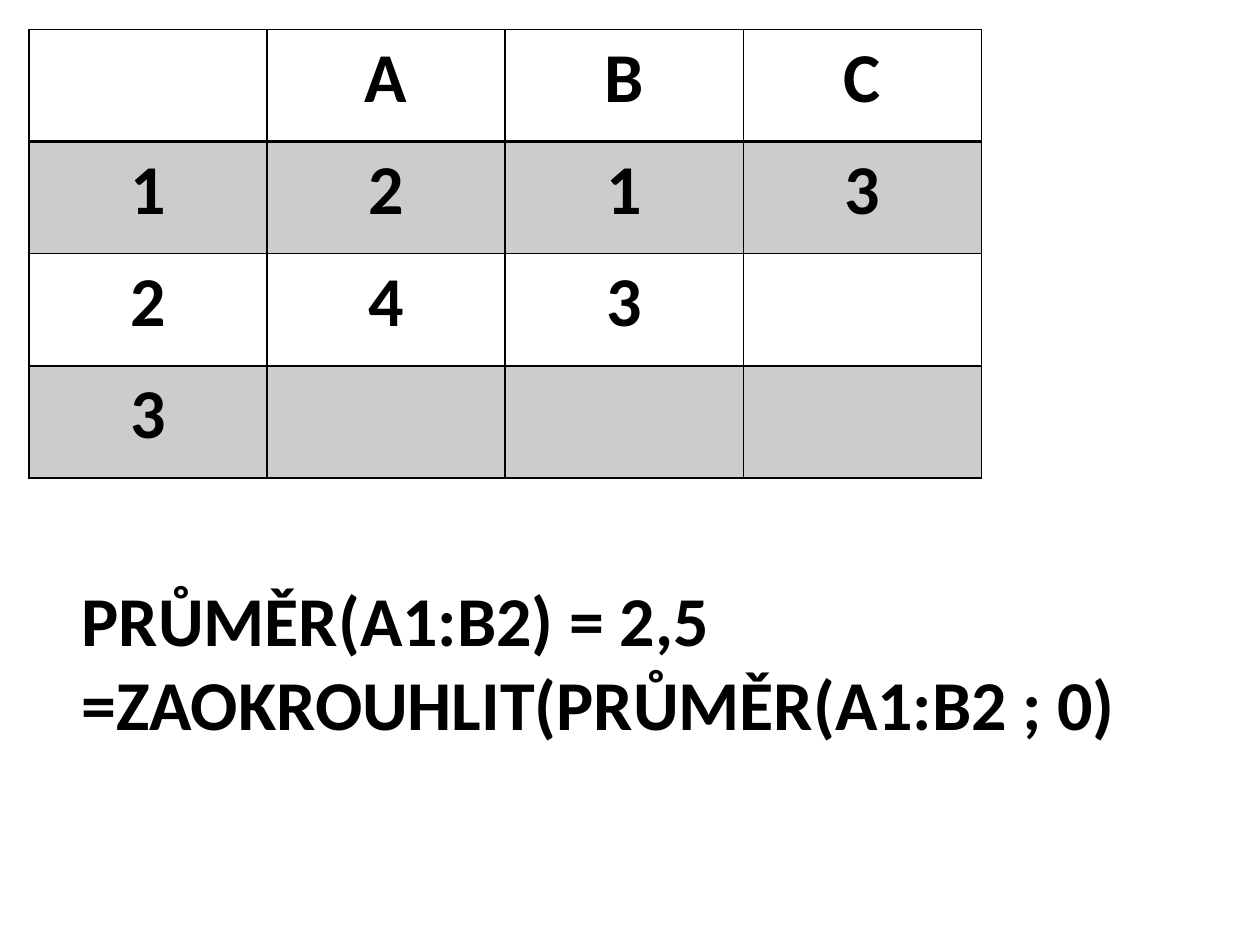
"""Build a slide showing a small spreadsheet and the rounding of its average."""
from dataclasses import dataclass

import lxml.etree
import pptx
import pptx.dml.color
import pptx.enum.text
import pptx.oxml.ns
import pptx.util


@dataclass(frozen=True)
class Theme:
    font: str = "Calibri"
    size: int = 40
    ink: str = "000000"
    band_opacity: int = 20
    thin: int = 1
    thick: int = 2


@dataclass(frozen=True)
class Area:
    left: float
    top: float
    width: float
    height: float

    def on(self, deck) -> tuple[int, int, int, int]:
        """Turn shares of the slide into lengths."""
        return (int(self.left * deck.slide_width), int(self.top * deck.slide_height),
                int(self.width * deck.slide_width), int(self.height * deck.slide_height))


THEME = Theme()
SHEET_AREA = Area(0.023, 0.031, 0.756, 0.475)
FORMULA_AREA = Area(0.055, 0.604, 0.867, 0.193)
SHEET = (
    ("", "A", "B", "C"),
    ("1", "2", "1", "3"),
    ("2", "4", "3", ""),
    ("3", "", "", ""),
)
FORMULAS = ("PRŮMĚR(A1:B2) = 2,5", "=ZAOKROUHLIT(PRŮMĚR(A1:B2 ; 0)")


def add_child(parent, tag: str, **attributes: str):
    """Append a DrawingML element to its parent."""
    return lxml.etree.SubElement(parent, pptx.oxml.ns.qn(tag), attributes)


def write(paragraph, words: str) -> None:
    """Add one run in the slide's type."""
    run = paragraph.add_run()
    run.text = words
    run.font.name = THEME.font
    run.font.size = pptx.util.Pt(THEME.size)
    run.font.bold = True
    run.font.color.rgb = pptx.dml.color.RGBColor.from_string(THEME.ink)


def draw_borders(cell, row: int) -> None:
    """Rule all four sides, with a thicker line under the header."""
    top = THEME.thick if row == 1 else THEME.thin
    bottom = THEME.thick if row == 0 else THEME.thin
    sides = {"a:lnL": THEME.thin, "a:lnR": THEME.thin, "a:lnT": top, "a:lnB": bottom}
    properties = cell._tc.get_or_add_tcPr()
    for tag, points in sides.items():
        line = add_child(properties, tag, w=str(pptx.util.Pt(points)))
        add_child(add_child(line, "a:solidFill"), "a:srgbClr", val=THEME.ink)


def fill_cell(cell, banded: bool) -> None:
    """Give a banded cell a translucent fill and leave the others clear."""
    if not banded:
        cell.fill.background()
        return
    cell.fill.solid()
    cell.fill.fore_color.rgb = pptx.dml.color.RGBColor.from_string(THEME.ink)
    color = cell._tc.tcPr.find(".//" + pptx.oxml.ns.qn("a:solidFill") + "[last()]/..")
    tint = cell._tc.tcPr.findall(pptx.oxml.ns.qn("a:solidFill"))[0][0]
    add_child(tint, "a:alpha", val=str(THEME.band_opacity * 1000))


def draw_sheet(deck, slide) -> None:
    """Draw the spreadsheet on an even grid."""
    grid = slide.shapes.add_table(len(SHEET), len(SHEET[0]), *SHEET_AREA.on(deck)).table
    grid.first_row = False
    grid.horz_banding = False
    for row, values in enumerate(SHEET):
        for column, value in enumerate(values):
            cell = grid.cell(row, column)
            draw_borders(cell, row)
            fill_cell(cell, banded=row % 2 == 1)
            if value:
                entry = cell.text_frame.paragraphs[0]
                entry.alignment = pptx.enum.text.PP_ALIGN.CENTER
                write(entry, value)


def draw_formulas(deck, slide) -> None:
    """Write one formula to a paragraph."""
    frame = slide.shapes.add_textbox(*FORMULA_AREA.on(deck)).text_frame
    frame.word_wrap = True
    frame.auto_size = pptx.enum.text.MSO_AUTO_SIZE.SHAPE_TO_FIT_TEXT
    for index, formula in enumerate(FORMULAS):
        write(frame.add_paragraph() if index else frame.paragraphs[0], formula)


def main() -> None:
    """Build and save the slide."""
    deck = pptx.Presentation()
    deck.slide_width = pptx.util.Inches(10)
    deck.slide_height = pptx.util.Inches(7.5)
    slide = deck.slides.add_slide(deck.slide_layouts[6])
    draw_sheet(deck, slide)
    draw_formulas(deck, slide)
    deck.save("out.pptx")


if __name__ == "__main__":
    main()
